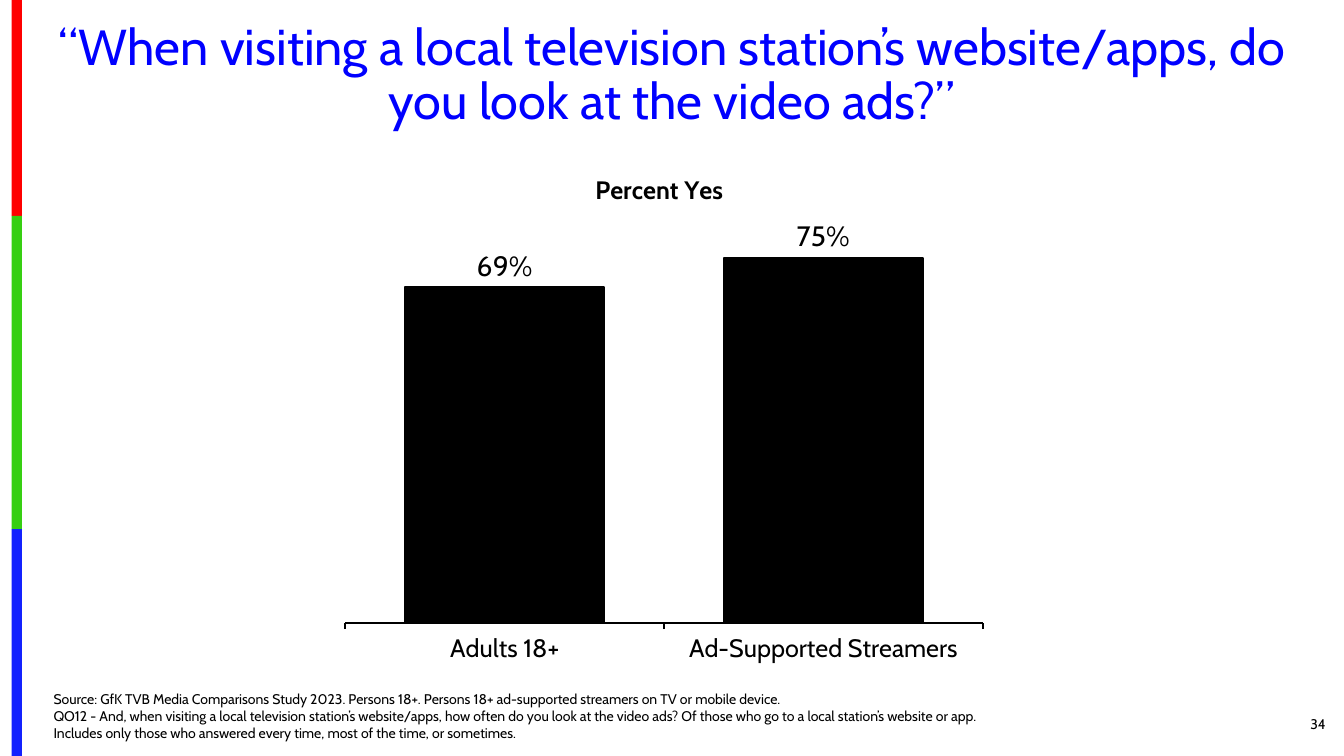
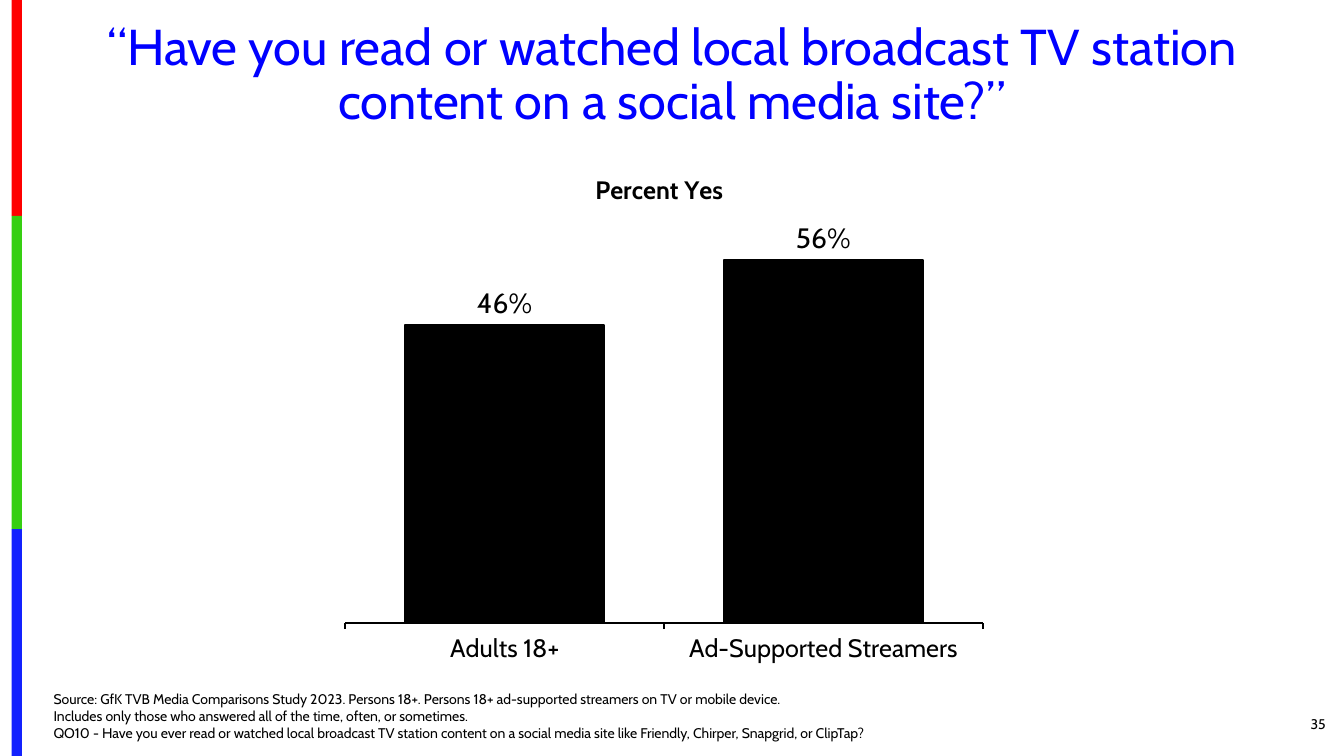
import pptx
import pptx.chart.data
import pptx.dml.color
import pptx.enum.chart
import pptx.enum.shapes
import pptx.enum.text
import pptx.oxml
import pptx.oxml.ns
import pptx.util

COLORS = {
    "title": "0000FF",
    "text": "000000",
    "column": "000000",
    "red": "FE0000",
    "green": "36CF12",
    "blue": "1322FE",
}
FONT = "Cabin"
COLUMNS, ROWS = 160, 90
BAND_EDGES = [0, 25.7, 63, ROWS]
CATEGORIES = ["Adults 18+", "Ad-Supported Streamers"]
SOURCE = (
    "Source: GfK TVB Media Comparisons Study 2023. Persons 18+. "
    "Persons 18+ ad-supported streamers on TV or mobile device."
)
PAGES = [
    {
        "title": "“When visiting a local television station’s website/apps, "
                 "do you look at the video ads?”",
        "number": 34,
        "values": [0.69, 0.75],
        "maximum": 0.8,
        "notes": [
            SOURCE,
            "QO12 - And, when visiting a local television station’s website/apps, "
            "how often do you look at the video ads? Of those who go to a local "
            "station’s website or app. Includes only those who answered every time, "
            "most of the time, or sometimes.",
        ],
    },
    {
        "title": "“Have you read or watched local broadcast TV station content "
                 "on a social media site?”",
        "number": 35,
        "values": [0.46, 0.56],
        "maximum": 0.6,
        "notes": [
            SOURCE,
            "Includes only those who answered all of the time, often, or sometimes.",
            "QO10 - Have you ever read or watched local broadcast TV station content "
            "on a social media site like Friendly, Chirper, Snapgrid, or ClipTap?",
        ],
    },
]


def color(name):
    return pptx.dml.color.RGBColor.from_string(COLORS[name])


def format_font(font, size, name="text", bold=False):
    font.name = FONT
    font.size = pptx.util.Pt(size)
    font.bold = bold
    font.color.rgb = color(name)


def write(text_frame, lines, align="LEFT", anchor="TOP", spacing=1.0, **font_format):
    text_frame.word_wrap = True
    text_frame.vertical_anchor = pptx.enum.text.MSO_ANCHOR[anchor]
    for index, line in enumerate(lines):
        paragraph = text_frame.add_paragraph() if index else text_frame.paragraphs[0]
        paragraph.alignment = pptx.enum.text.PP_ALIGN[align]
        paragraph.line_spacing = spacing
        run = paragraph.add_run()
        run.text = line
        format_font(run.font, **font_format)


def set_layout(element, position, **settings):
    tags = "".join(f'<c:{tag} val="{value}"/>' for tag, value in settings.items())
    layout = pptx.oxml.parse_xml(
        f'<c:layout {pptx.oxml.ns.nsdecls("c")}>'
        f"<c:manualLayout>{tags}</c:manualLayout></c:layout>"
    )
    for old_layout in element.findall(pptx.oxml.ns.qn("c:layout")):
        element.remove(old_layout)
    element.insert(position, layout)


class Deck:
    def __init__(self):
        self.presentation = pptx.Presentation()
        self.presentation.slide_width = pptx.util.Inches(13.33)
        self.presentation.slide_height = pptx.util.Inches(7.5)
        self.slide = None

    def area(self, left, top, width, height):
        column = self.presentation.slide_width / COLUMNS
        row = self.presentation.slide_height / ROWS
        return [round(length) for length in
                (left * column, top * row, width * column, height * row)]

    def add_slide(self):
        self.slide = self.presentation.slides.add_slide(self.presentation.slide_layouts[6])
        for name, top, bottom in zip(("red", "green", "blue"), BAND_EDGES, BAND_EDGES[1:]):
            self.band(name, top, bottom)

    def band(self, name, top, bottom):
        shape = self.slide.shapes.add_shape(
            pptx.enum.shapes.MSO_SHAPE.RECTANGLE, *self.area(1.4, top, 1.2, bottom - top)
        )
        shape.shadow.inherit = False
        shape.fill.solid()
        shape.fill.fore_color.rgb = color(name)
        shape.line.fill.background()

    def text(self, area, lines, **text_format):
        box = self.slide.shapes.add_textbox(*self.area(*area))
        write(box.text_frame, lines, **text_format)

    def title(self, text):
        self.text((5.5, 2, 149, 14.3), [text], align="CENTER", spacing=0.9,
                  size=36, name="title")

    def footer(self, notes, number):
        self.text((146, 83.8, 13, 4.8), [str(number)], align="RIGHT",
                  anchor="MIDDLE", size=10)
        self.text((5.2, 81.5, 113, 7.3), notes, anchor="BOTTOM", size=10)

    def column_chart(self, title, values, maximum):
        data = pptx.chart.data.CategoryChartData(number_format="0%")
        data.categories = CATEGORIES
        data.add_series("Series 1", values)
        chart = self.slide.shapes.add_chart(
            pptx.enum.chart.XL_CHART_TYPE.COLUMN_CLUSTERED,
            *self.area(41, 18, 77, 67), data
        ).chart
        format_font(chart.font, 10)
        chart.has_legend = False
        chart.has_title = True
        write(chart.chart_title.text_frame, [title], align="CENTER", size=18, bold=True)
        title_element = chart.chart_title.element
        set_layout(title_element, 1, xMode="edge", yMode="edge", x=0.38, y=0.03)
        plot_area = title_element.getparent().find(pptx.oxml.ns.qn("c:plotArea"))
        set_layout(plot_area, 0, layoutTarget="inner", xMode="edge", yMode="edge",
                   x=0, y=0.147, w=0.987, h=0.692)

        value_axis = chart.value_axis
        value_axis.minimum_scale = 0
        value_axis.maximum_scale = maximum
        value_axis.has_major_gridlines = False
        value_axis.visible = False
        category_axis = chart.category_axis
        category_axis.major_tick_mark = pptx.enum.chart.XL_TICK_MARK.OUTSIDE
        format_font(category_axis.tick_labels.font, 18)

        plot = chart.plots[0]
        plot.gap_width = 60
        plot.vary_by_categories = False
        series = plot.series[0]
        series.format.fill.solid()
        series.format.fill.fore_color.rgb = color("column")
        for line in (category_axis.format.line, series.format.line):
            line.color.rgb = color("column")
            line.width = pptx.util.Pt(1.5)
        labels = series.data_labels
        labels.show_value = True
        labels.number_format = "0%"
        labels.number_format_is_linked = False
        labels.position = pptx.enum.chart.XL_LABEL_POSITION.OUTSIDE_END
        format_font(labels.font, 20)


def main():
    deck = Deck()
    for page in PAGES:
        deck.add_slide()
        deck.title(page["title"])
        deck.footer(page["notes"], page["number"])
        deck.column_chart("Percent Yes", page["values"], page["maximum"])
    deck.presentation.save("out.pptx")


if __name__ == "__main__":
    main()
